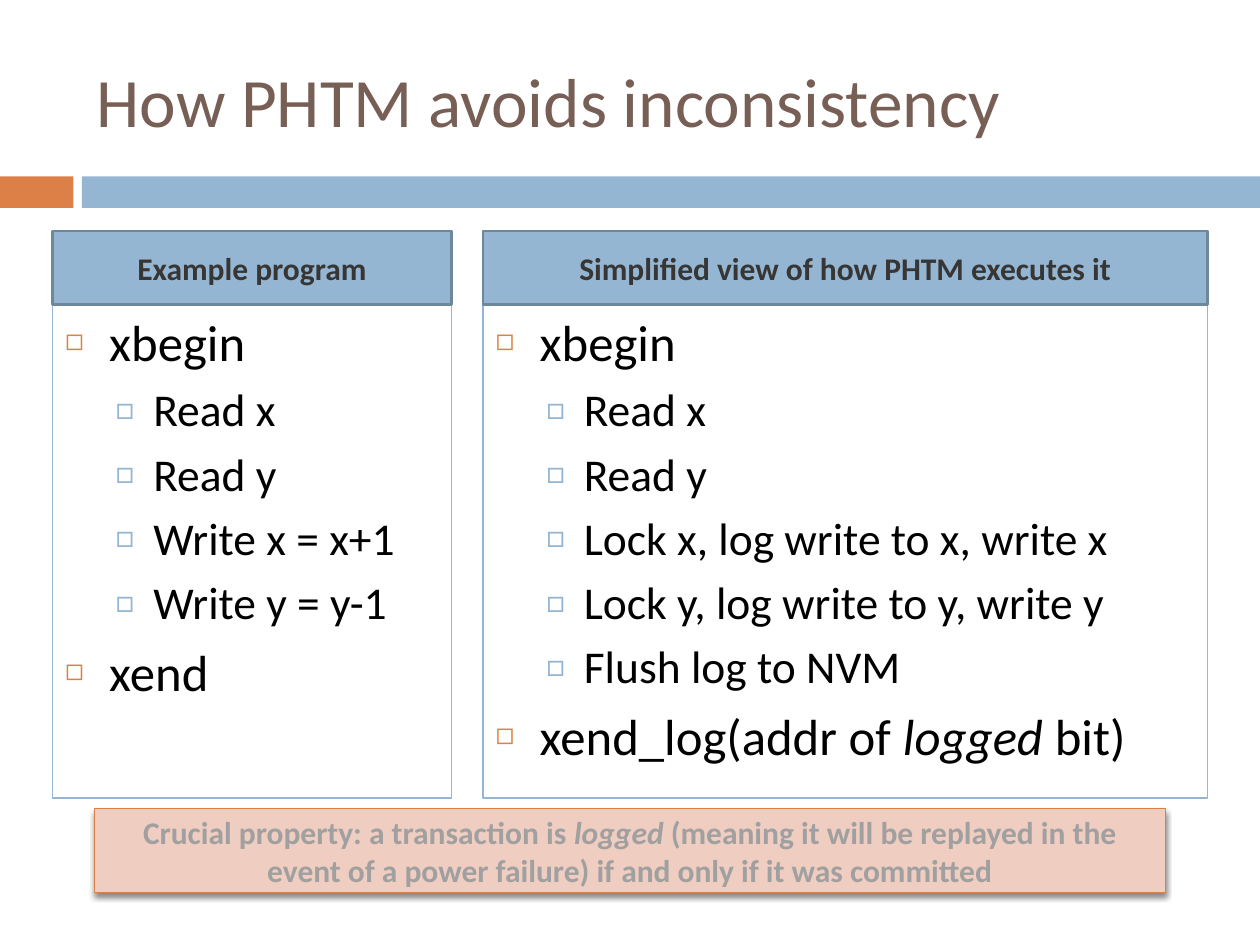
from typing import NamedTuple, Optional

from lxml.etree import SubElement
from pptx import Presentation
from pptx.dml.color import RGBColor
from pptx.enum.shapes import MSO_SHAPE as Shape
from pptx.enum.text import MSO_ANCHOR as Anchor, MSO_AUTO_SIZE as AutoSize, PP_ALIGN as Align
from pptx.oxml.ns import qn
from pptx.util import Inches, Pt

SLIDE_WIDTH, SLIDE_HEIGHT = Inches(10), Inches(7.5)
GRID_COLUMNS, GRID_ROWS = 120, 90
FONT = "Calibri"

WHITE = RGBColor(0xFF, 0xFF, 0xFF)
BLACK = RGBColor(0x00, 0x00, 0x00)
CHARCOAL = RGBColor(0x38, 0x36, 0x35)
GREY = RGBColor(0xA0, 0xA0, 0xA0)
BROWN = RGBColor(0x77, 0x5F, 0x55)
BLUE = RGBColor(0x94, 0xB6, 0xD2)
SLATE = RGBColor(0x6D, 0x87, 0x9B)
ORANGE = RGBColor(0xDD, 0x80, 0x47)
PEACH = RGBColor(0xEF, 0xCD, 0xC1)


class Area(NamedTuple):
    """A place on the slide, in grid columns and rows."""
    column: float
    row: float
    columns: float
    rows: float


class ListStyle(NamedTuple):
    size: float
    margin: float
    indent: float
    space_before: float
    bullet: str
    bullet_color: RGBColor
    bullet_percent: int


class Item(NamedTuple):
    level: int
    text: str


class Panel(NamedTuple):
    column: int
    columns: int
    heading: str
    items: list[Item]


LIST_STYLES = [
    ListStyle(29, 0.35, -0.35, 7, "◻", ORANGE, 60),
    ListStyle(26, 0.7, -0.3, 5.5, "□", BLUE, 70),
]
# Asterisks enclose italic words.
PANELS = [
    Panel(5, 38, "Example program", [
        Item(0, "xbegin"), Item(1, "Read x"), Item(1, "Read y"),
        Item(1, "Write x = x+1"), Item(1, "Write y = y-1"), Item(0, "xend"),
    ]),
    Panel(46, 69, "Simplified view of how PHTM executes it", [
        Item(0, "xbegin"), Item(1, "Read x"), Item(1, "Read y"),
        Item(1, "Lock x, log write to x, write x"),
        Item(1, "Lock y, log write to y, write y"),
        Item(1, "Flush log to NVM"),
        Item(0, "xend_log(addr of *logged* bit)"),
    ]),
]
CONCLUSION = ("Crucial property: a transaction is *logged* (meaning it will be replayed "
              "in the event of a power failure) if and only if it was committed")


def place(shape, area: Area) -> None:
    column, row = SLIDE_WIDTH / GRID_COLUMNS, SLIDE_HEIGHT / GRID_ROWS
    shape.left, shape.top = round(area.column * column), round(area.row * row)
    shape.width, shape.height = round(area.columns * column), round(area.rows * row)


def write(paragraph, text: str, *, size: float, color: RGBColor, bold: bool = False,
          align: Align = Align.LEFT) -> None:
    """Add text to a paragraph; words between asterisks become italic."""
    paragraph.alignment = align
    for index, part in enumerate(text.split("*")):
        run = paragraph.add_run()
        run.text = part
        run.font.name, run.font.size = FONT, Pt(size)
        run.font.bold, run.font.italic = bold, index % 2 == 1
        run.font.color.rgb = color


def add_box(slide, area: Area, fill: RGBColor, line: Optional[RGBColor] = None,
            line_width: float = 1):
    shape = slide.shapes.add_shape(Shape.RECTANGLE, 0, 0, 0, 0)
    place(shape, area)
    shape.shadow.inherit = False
    shape.fill.solid()
    shape.fill.fore_color.rgb = fill
    if line is None:
        shape.line.fill.background()
    else:
        shape.line.color.rgb = line
        shape.line.width = Pt(line_width)
    shape.text_frame.word_wrap = True
    shape.text_frame.vertical_anchor = Anchor.MIDDLE
    return shape


def add_shadow(shape) -> None:
    effects = shape._element.spPr.find(qn("a:effectLst"))
    shadow = SubElement(effects, qn("a:outerShdw"), blurRad=str(Pt(3)), dist=str(Pt(2.4)),
                        dir="5400000", rotWithShape="0")
    color = SubElement(shadow, qn("a:srgbClr"), val=str(BLACK))
    SubElement(color, qn("a:alpha"), val="45000")


def format_list_item(paragraph, level: int) -> None:
    style = LIST_STYLES[level]
    paragraph.level = level
    paragraph.space_before = Pt(style.space_before)
    properties = paragraph._p.get_or_add_pPr()
    properties.set("marL", str(Inches(style.margin)))
    properties.set("indent", str(Inches(style.indent)))
    color = SubElement(properties, qn("a:buClr"))
    SubElement(color, qn("a:srgbClr"), val=str(style.bullet_color))
    SubElement(properties, qn("a:buSzPct"), val=str(style.bullet_percent * 1000))
    SubElement(properties, qn("a:buFont"), typeface=FONT)
    SubElement(properties, qn("a:buChar"), char=style.bullet)


def fill_panel(slide, placeholder, panel: Panel) -> None:
    place(placeholder, Area(panel.column, 29, panel.columns, 47))
    placeholder.line.color.rgb = BLUE
    placeholder.line.width = Pt(0.75)
    frame = placeholder.text_frame
    frame.auto_size = AutoSize.NONE
    for index, item in enumerate(panel.items):
        paragraph = frame.add_paragraph() if index else frame.paragraphs[0]
        format_list_item(paragraph, item.level)
        write(paragraph, item.text, size=LIST_STYLES[item.level].size, color=BLACK)

    heading = add_box(slide, Area(panel.column, 22, panel.columns, 7), BLUE, SLATE, 1.5)
    write(heading.text_frame.paragraphs[0], panel.heading, size=18, color=CHARCOAL,
          bold=True, align=Align.CENTER)


def main() -> None:
    presentation = Presentation()
    presentation.slide_width, presentation.slide_height = SLIDE_WIDTH, SLIDE_HEIGHT
    slide = presentation.slides.add_slide(presentation.slide_layouts.get_by_name("Two Content"))
    slide.background.fill.solid()
    slide.background.fill.fore_color.rgb = WHITE
    title, *bodies = slide.placeholders

    add_box(slide, Area(0, 16.8, 7, 3), ORANGE)
    add_box(slide, Area(7.8, 16.8, 112.2, 3), BLUE)

    place(title, Area(8, 3, 107, 13))
    title.text_frame.auto_size = AutoSize.NONE
    title.text_frame.vertical_anchor = Anchor.MIDDLE
    write(title.text_frame.paragraphs[0], "How PHTM avoids inconsistency",
          size=39.6, color=BROWN)

    for placeholder, panel in zip(bodies, PANELS):
        fill_panel(slide, placeholder, panel)

    conclusion = add_box(slide, Area(9, 77, 102, 8), PEACH, ORANGE, 0.79)
    add_shadow(conclusion)
    write(conclusion.text_frame.paragraphs[0], CONCLUSION, size=18, color=GREY,
          bold=True, align=Align.CENTER)

    presentation.save("out.pptx")


if __name__ == "__main__":
    main()
